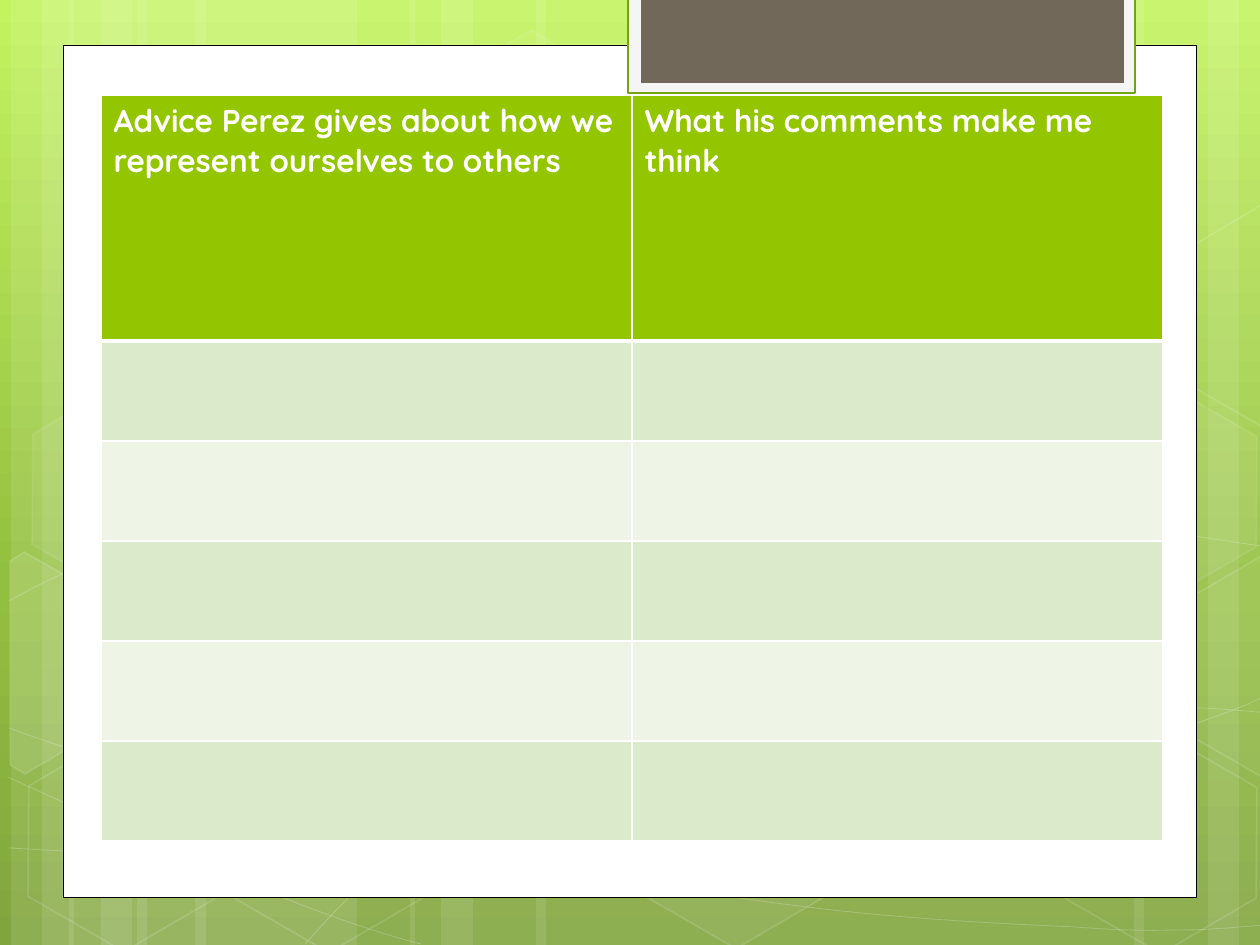
from copy import deepcopy
from dataclasses import dataclass
from math import cos, radians, sin

from lxml import etree
from pptx import Presentation
from pptx.dml.color import RGBColor
from pptx.enum.shapes import MSO_SHAPE
from pptx.oxml.ns import qn
from pptx.util import Pt

RECTANGLE = MSO_SHAPE.RECTANGLE
HEXAGON = MSO_SHAPE.HEXAGON
BLANK_LAYOUT = 6
SCALE = 914400 / 126
WIDTH, HEIGHT = 1260, 945
TILT = 30


@dataclass(frozen=True)
class Theme:
    white: str = "FFFFFF"
    black: str = "000000"
    tab_frame: str = "F5F5F5"
    tab_edge: str = "74A510"
    tab: str = "71685A"
    header: str = "94C600"
    bands: tuple = ("DCEACC", "EEF5E7")
    background: tuple = ((0, "C3F35F"), (0.62, "93BF3F"), (1, "81A53E"))
    font: str = "Quicksand"
    header_size: int = 18


BAND_SPANS = [
    (137, 220), (11, 63), (42, 105), (195, 220), (69, 63), (101, 105),
    (924, 220), (1208, 63), (1134, 105), (536, 388), (410, 63), (441, 105),
]
CURVES = [
    ("CCCC", [
        (9, 848), (77, 852), (145, 856), (239, 854), (334, 853), (451, 851), (577, 838),
        (703, 825), (882, 801), (998, 777), (1113, 753), (1231, 715), (1269, 694)]),
    ("CCCC", [
        (9, 601), (45, 581), (82, 562), (152, 543), (224, 524), (326, 496), (437, 488),
        (549, 479), (685, 478), (824, 488), (963, 498), (1193, 537), (1269, 547)]),
    ("C", [(8, 777), (160, 847), (311, 916), (421, 944)]),
    ("CCCCCC", [
        (9, 728), (48, 742), (88, 756), (161, 776), (234, 795), (344, 827), (450, 848),
        (554, 869), (687, 892), (791, 905), (896, 919), (1008, 924), (1075, 927),
        (1140, 932), (1158, 930), (1191, 930), (1223, 929), (1246, 926), (1269, 925)]),
    ("CCCCCCCLCC", [
        (305, 944), (328, 919), (350, 893), (381, 871), (411, 848), (454, 823), (489, 805),
        (524, 787), (546, 780), (592, 767), (638, 755), (722, 737), (766, 728),
        (811, 719), (818, 719), (857, 717), (895, 713), (958, 709), (1000, 708),
        (1045, 707), (1116, 708), (1116, 708), (1201, 708),
        (1223, 709), (1245, 711), (1256, 712), (1268, 713), (1264, 712), (1268, 713)]),
]
HEXAGONS = [
    (421, 45, 4, 8), (626, 742, 6, 12), (14, 745, 0, 12), (18, 393, 7, 8),
    (219, 746, 0, 12), (949, 571, 10, 12), (1051, 747, 0, 12), (1051, 396, 7, 8),
]
CUT_HEXAGONS = [
    (10, (45, 674), [(10, 561), (24, 552), (121, 607), (120, 718), (25, 774), (10, 765)]),
    (4, (1241, 655),
     [(1167, 611), (1261, 556), (1271, 562), (1271, 772), (1263, 777), (1167, 722)]),
    (0, (1241, 304),
     [(1167, 261), (1261, 205), (1273, 212), (1271, 422), (1263, 427), (1167, 372)]),
]
HEADINGS = [
    "Advice Perez gives about how we represent ourselves to others",
    "What his comments make me think",
]


def emu(pixels):
    return round(pixels * SCALE)


def turn_back(points, center):
    cosine, sine = cos(radians(TILT)), sin(radians(TILT))
    offsets = [(x - center[0], y - center[1]) for x, y in points]
    return [(center[0] + x * cosine + y * sine, center[1] + y * cosine - x * sine)
            for x, y in offsets]


class SlideBuilder:
    """Draws styled elements on the current slide, measured in pixels."""

    def __init__(self, slide, theme):
        self.slide = slide
        self.theme = theme

    def paint(self, fill, color, opacity=100):
        if not color or not opacity:
            fill.background()
            return
        fill.solid()
        fill.fore_color.rgb = RGBColor.from_string(color)
        if opacity < 100:
            for node in fill._xPr.iter(qn("a:srgbClr")):
                etree.SubElement(node, qn("a:alpha"), val=str(opacity * 1000))

    def style(self, shape, fill=None, opacity=100, line=None, weight=1, line_opacity=100):
        shape.shadow.inherit = False
        self.paint(shape.fill, fill, opacity)
        if line:
            shape.line.width = Pt(weight)
        self.paint(shape.line.fill, line, line_opacity)

    def background(self):
        fill = self.slide.background.fill
        fill.gradient()
        fill.gradient_angle = 270
        stop_list = self.slide.element.find(".//" + qn("a:gsLst"))
        stop_list.append(deepcopy(stop_list[0]))
        for stop, (position, color) in zip(fill.gradient_stops, self.theme.background):
            stop.position = position
            stop.color.rgb = RGBColor.from_string(color)

    def shape(self, kind, left, top, width, height, **look):
        shape = self.slide.shapes.add_shape(kind, *map(emu, (left, top, width, height)))
        self.style(shape, **look)
        return shape

    def hexagon(self, left, top, opacity, line_opacity):
        white = self.theme.white
        shape = self.shape(HEXAGON, left, top, 220, 192, fill=white, opacity=opacity,
                           line=white, line_opacity=line_opacity)
        shape.rotation = TILT
        shape.adjustments[0] = 0.285

    def outline(self, points, close, **look):
        start, *others = [(emu(x), emu(y)) for x, y in points]
        builder = self.slide.shapes.build_freeform(*start, scale=1)
        builder.add_line_segments(others, close=close)
        shape = builder.convert_to_shape()
        self.style(shape, line=self.theme.white, **look)
        return shape

    def curve(self, commands, points):
        shape = self.outline(points, False, weight=0.5, line_opacity=20)
        segments = iter(list(shape.element.iter(qn("a:lnTo"))))
        for command in commands:
            segment = next(segments)
            if command == "C":
                segment.tag = qn("a:cubicBezTo")
                for _ in range(2):
                    extra = next(segments)
                    segment.append(extra[0])
                    extra.getparent().remove(extra)

    def cut_hexagon(self, opacity, center, points):
        shape = self.outline(turn_back(points, center), True, fill=self.theme.white,
                             opacity=opacity, line_opacity=12)
        shape.rotation = TILT

    def cell(self, cell, fill, top_weight=1, bottom_weight=1):
        properties = cell._tc.get_or_add_tcPr()
        weights = {"a:lnL": 1, "a:lnR": 1, "a:lnT": top_weight, "a:lnB": bottom_weight}
        for tag, weight in weights.items():
            border = etree.SubElement(properties, qn(tag), w=str(Pt(weight)))
            solid = etree.SubElement(border, qn("a:solidFill"))
            etree.SubElement(solid, qn("a:srgbClr"), val=self.theme.white)
        self.paint(cell.fill, fill)

    def heading(self, cell, text):
        run = cell.text_frame.paragraphs[0].add_run()
        run.text = text
        formats = {"name": self.theme.font, "size": Pt(self.theme.header_size), "bold": True}
        for name, value in formats.items():
            setattr(run.font, name, value)
        run.font.color.rgb = RGBColor.from_string(self.theme.white)

    def table(self, left, top, column_width, row_heights, headings):
        size = (column_width * len(headings), sum(row_heights))
        frame = self.slide.shapes.add_table(
            len(row_heights), len(headings), *map(emu, (left, top, *size)))
        table = frame.table
        for column in table.columns:
            column.width = emu(column_width)
        for index, (row, height) in enumerate(zip(table.rows, row_heights)):
            row.height = emu(height)
            for cell in row.cells:
                if index == 0:
                    self.cell(cell, self.theme.header, bottom_weight=3)
                else:
                    self.cell(cell, self.theme.bands[(index - 1) % 2],
                              top_weight=3 if index == 1 else 1)
        for cell, text in zip(table.rows[0].cells, headings):
            self.heading(cell, text)


def main():
    presentation = Presentation()
    presentation.slide_width, presentation.slide_height = emu(WIDTH), emu(HEIGHT)
    theme = Theme()
    slide = presentation.slides.add_slide(presentation.slide_layouts[BLANK_LAYOUT])
    builder = SlideBuilder(slide, theme)
    builder.background()
    for left, width in BAND_SPANS:
        builder.shape(RECTANGLE, left, 0, width, HEIGHT, fill=theme.white, opacity=10)
    for commands, points in CURVES:
        builder.curve(commands, points)
    for hexagon in HEXAGONS:
        builder.hexagon(*hexagon)
    for cut_hexagon in CUT_HEXAGONS:
        builder.cut_hexagon(*cut_hexagon)
    builder.shape(RECTANGLE, 63, 45, 1134, 853, fill=theme.white, line=theme.black, weight=0.5)
    builder.shape(RECTANGLE, 628, -3, 507, 96, fill=theme.tab_frame,
                  line=theme.tab_edge, weight=1.25)
    builder.shape(RECTANGLE, 641, -3, 483, 86, fill=theme.tab)
    builder.table(101, 95, 531, [246] + [100] * 5, HEADINGS)
    presentation.save("out.pptx")


if __name__ == "__main__":
    main()
